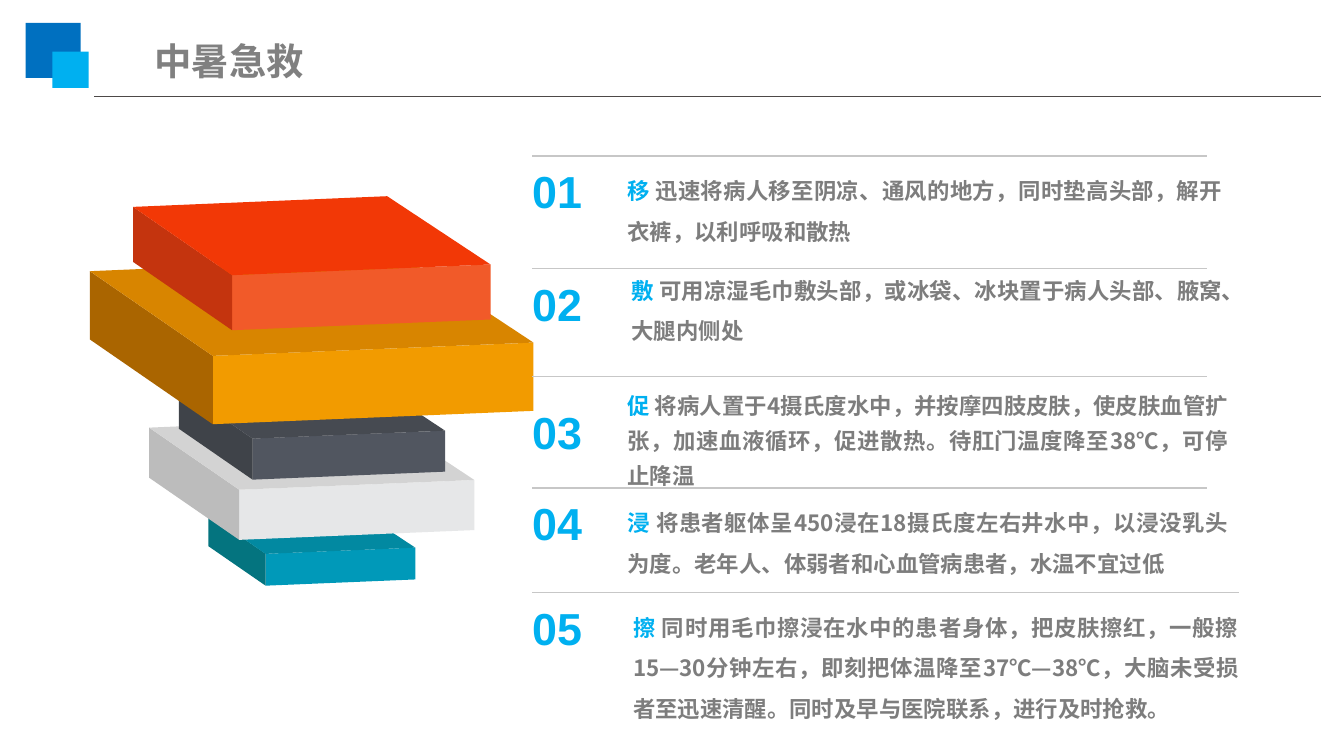
from dataclasses import dataclass

from lxml import etree
from pptx import Presentation
from pptx.dml.color import RGBColor
from pptx.enum.shapes import MSO_CONNECTOR, MSO_SHAPE
from pptx.enum.text import MSO_ANCHOR, MSO_AUTO_SIZE, PP_ALIGN
from pptx.oxml.ns import qn
from pptx.util import Pt

STRAIGHT = MSO_CONNECTOR.STRAIGHT
RECTANGLE = MSO_SHAPE.RECTANGLE
TOP = MSO_ANCHOR.TOP
NO_AUTOFIT = MSO_AUTO_SIZE.NONE
LEFT = PP_ALIGN.LEFT
JUSTIFY = PP_ALIGN.JUSTIFY
TITLE_ONLY_LAYOUT = 5


@dataclass(frozen=True)
class Theme:
    dark_blue: str = "0070C0"
    accent: str = "00B0F0"
    title: str = "808080"
    body: str = "7D7D7D"
    header_rule: str = "4D4948"
    row_rule: str = "C7C7C7"
    text_font: str = "Noto Sans CJK SC"
    number_font: str = "Arial"
    title_size: float = 20
    number_size: float = 24
    body_size: float = 12
    rule_width: float = 0.75


THEME = Theme()

SLABS = [
    ((111.6, 272.2, 110.9), ("0099B9", "04747F", "0289A1")),
    ((79.9, 223.9, 174.2), ("E6E7E8", "BCBCBC", "D3D3D3")),
    ((95.8, 203.5, 142.6), ("515660", "3F4349", "464A51")),
    ((48.2, 138.2, 237.6), ("F29B00", "AA6500", "D88500")),
    ((71.3, 105.1, 191.5), ("F15A29", "C4340E", "F23806")),
]

SLAB_CORNERS = {
    "back_left": (0, 3),
    "back_right": (71.1, 0),
    "front_right": (100, 19.1),
    "front_left": (27.7, 22.1),
    "base_left": (0, 18.4),
    "base_front": (27.7, 37.5),
    "base_right": (100, 34.5),
}
SLAB_FACES = [
    ("front_right", "base_right", "base_front", "front_left"),
    ("base_front", "base_left", "back_left", "front_left"),
    ("front_left", "back_left", "back_right", "front_right"),
]

STEP_LEFT = 285.1
STEPS = [
    ((83.5, 361.4), 4.3, (51.1, 4.3, 319, 46), 1.5,
     "移 ", "迅速将病人移至阴凉、通风的地方，同时垫高头部，解开衣裤，以利呼吸和散热"),
    ((144, 361.4), 4.3, (53.3, -2.9, 316.8, 50), 1.5,
     "敷", " 可用凉湿毛巾敷头部，或冰袋、冰块置于病人头部、腋窝、大腿内侧处"),
    ((201.6, 361.4), 15.1, (51.1, 4.3, 321.8, 28), 1.3,
     "促", " 将病人置于4摄氏度水中，并按摩四肢皮肤，使皮肤血管扩张，加速血液循环，促进散热。待肛门温度降至38℃，可停止降温"),
    ((261.4, 361.4), 4.3, (51.1, 4.3, 321.8, 35), 1.5,
     "浸 ", "将患者躯体呈450浸在18摄氏度左右井水中，以浸没乳头为度。老年人、体弱者和心血管病患者，水温不宜过低"),
    ((317.5, 378.7), 4.3, (54, 4.3, 324.7, 41), 1.5,
     "擦 ", "同时用毛巾擦浸在水中的患者身体，把皮肤擦红，一般擦15—30分钟左右，即刻把体温降至37℃—38℃，"
     "大脑未受损者至迅速清醒。同时及早与医院联系，进行及时抢救。"),
]


def paint(shape, color):
    shape.shadow.inherit = False
    shape.fill.solid()
    shape.fill.fore_color.rgb = RGBColor.from_string(color)
    shape.line.fill.background()


def add_rule(slide, left, top, width, color):
    rule = slide.shapes.add_connector(
        STRAIGHT, Pt(left), Pt(top), Pt(left + width), Pt(top))
    rule.line.color.rgb = RGBColor.from_string(color)
    rule.line.width = Pt(THEME.rule_width)
    etree.SubElement(rule._element.spPr, qn("a:effectLst"))


def style_run(run, font_name, size, color):
    run.font.name = font_name
    run.font.size = Pt(size)
    run.font.bold = True
    run.font.color.rgb = RGBColor.from_string(color)
    latin = run.font._element.find(qn("a:latin"))
    east_asian = etree.Element(qn("a:ea"), typeface=font_name)
    latin.addnext(east_asian)


def add_text_box(slide, box):
    frame = slide.shapes.add_textbox(*map(Pt, box)).text_frame
    frame.word_wrap = True
    frame.margin_left = frame.margin_right = 0
    frame.margin_top = frame.margin_bottom = 0
    return frame


def add_header(slide, left, top, width):
    for offset_x, offset_y, size, color in (
            (0, 0, 29.5, THEME.dark_blue), (14.4, 15.5, 19.5, THEME.accent)):
        square = slide.shapes.add_shape(
            RECTANGLE, Pt(left + offset_x), Pt(top + offset_y), Pt(size), Pt(size))
        paint(square, color)
    add_rule(slide, left + 36.7, top + 39.6, width - 36.7, THEME.header_rule)

    title = slide.shapes.title
    title.left, title.top = Pt(left + 61.9), Pt(top + 4.4)
    title.width, title.height = Pt(172.8), Pt(31)
    frame = title.text_frame
    frame.text = "中暑急救"
    frame.auto_size = NO_AUTOFIT
    frame.vertical_anchor = TOP
    paragraph = frame.paragraphs[0]
    paragraph.alignment = LEFT
    style_run(paragraph.runs[0], THEME.text_font, THEME.title_size, THEME.title)


def add_slab(slide, left, top, width, colors):
    group = slide.shapes.add_group_shape()
    corners = {
        name: (Pt(left + x * width / 100), Pt(top + y * width / 100))
        for name, (x, y) in SLAB_CORNERS.items()
    }
    for face, color in zip(SLAB_FACES, colors):
        first, *others = [corners[name] for name in face]
        builder = group.shapes.build_freeform(*first)
        builder.add_line_segments(others, close=True)
        paint(builder.convert_to_shape(), color)


def add_step(slide, left, number, step):
    (top, rule_width), number_offset, text_box, spacing, keyword, advice = step
    add_rule(slide, left, top, rule_width, THEME.row_rule)

    number_frame = add_text_box(slide, (left, top + number_offset, 50.4, 28))
    number_frame.text = f"{number:02d}"
    style_run(number_frame.paragraphs[0].runs[0],
              THEME.number_font, THEME.number_size, THEME.accent)

    offset_x, offset_y, width, height = text_box
    frame = add_text_box(slide, (left + offset_x, top + offset_y, width, height))
    paragraph = frame.paragraphs[0]
    paragraph.alignment = JUSTIFY
    paragraph.line_spacing = spacing
    for text, color in ((keyword, THEME.accent), (advice, THEME.body)):
        run = paragraph.add_run()
        run.text = text
        style_run(run, THEME.text_font, THEME.body_size, color)


def main():
    presentation = Presentation()
    presentation.slide_width, presentation.slide_height = Pt(720), Pt(405)
    slide = presentation.slides.add_slide(
        presentation.slide_layouts[TITLE_ONLY_LAYOUT])
    add_header(slide, 13.7, 12.2, 694.1)
    for box, colors in SLABS:
        add_slab(slide, *box, colors)
    for number, step in enumerate(STEPS, start=1):
        add_step(slide, STEP_LEFT, number, step)
    presentation.save("out.pptx")


if __name__ == "__main__":
    main()
